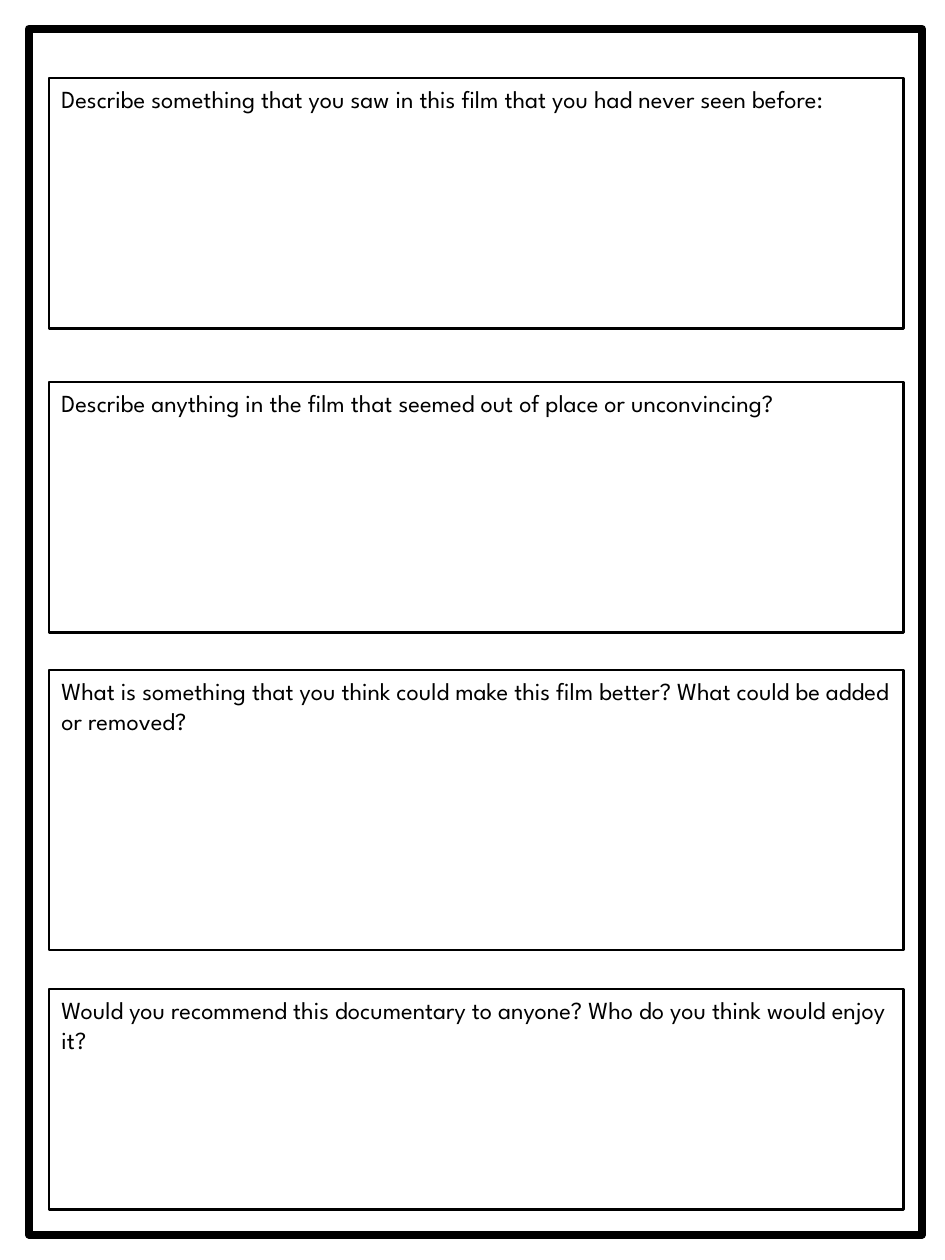
"""Builds a film response worksheet with four framed questions."""
from dataclasses import dataclass

from pptx import Presentation
from pptx import util as u
from pptx.dml.color import RGBColor
from pptx.enum import shapes, text


@dataclass(frozen=True)
class Theme:
    ink: RGBColor = RGBColor(0, 0, 0)
    font: str = "League Spartan"
    question_size: u.Length = u.Pt(14)
    border: u.Length = u.Pt(4.5)
    outline: u.Length = u.Pt(1.5)


THEME = Theme()
BOX_LEFT, BOX_WIDTH = 0.99, 17.22
QUESTIONS = [
    (1.57, 5.05, "Describe something that you saw in this film that you had never seen before:"),
    (7.7, 5.05, "Describe anything in the film that seemed out of place or unconvincing?"),
    (13.51, 5.64, "What is something that you think could make this film better? "
                  "What could be added or removed?"),
    (19.94, 4.45, "Would you recommend this documentary to anyone? "
                  "Who do you think would enjoy it?"),
]


def add_frame(page, left, top, width, height, weight):
    box = page.shapes.add_shape(
        shapes.MSO_SHAPE.RECTANGLE, u.Cm(left), u.Cm(top), u.Cm(width), u.Cm(height))
    box.shadow.inherit = False
    box.fill.background()
    box.line.color.rgb = THEME.ink
    box.line.width = weight
    return box


def add_question(page, top, height, wording):
    box = add_frame(page, BOX_LEFT, top, BOX_WIDTH, height, THEME.outline)
    frame = box.text_frame
    frame.word_wrap = True
    frame.vertical_anchor = text.MSO_ANCHOR.TOP
    para = frame.paragraphs[0]
    para.alignment = text.PP_ALIGN.LEFT
    span = para.add_run()
    span.text = wording
    span.font.name = THEME.font
    span.font.size = THEME.question_size
    span.font.color.rgb = THEME.ink


def main():
    deck = Presentation()
    deck.slide_width, deck.slide_height = u.Cm(19.05), u.Cm(25.4)
    page = deck.slides.add_slide(deck.slide_layouts.get_by_name("Blank"))
    add_frame(page, 0.58, 0.58, 18.01, 24.31, THEME.border)
    for top, height, wording in QUESTIONS:
        add_question(page, top, height, wording)
    deck.save("out.pptx")


if __name__ == "__main__":
    main()
